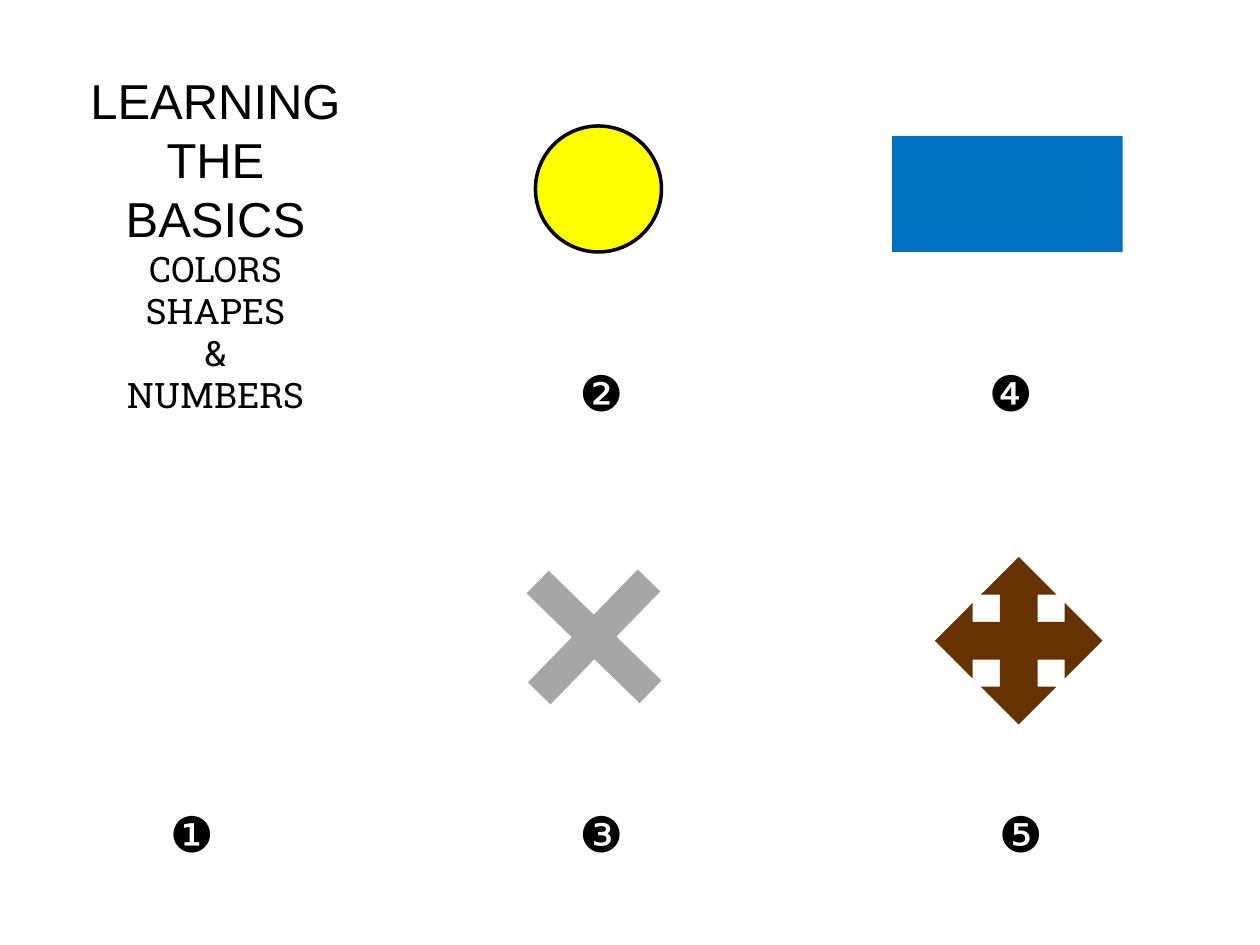
from pptx import Presentation
from pptx.dml.color import RGBColor
from pptx.enum.shapes import MSO_SHAPE as Shape
from pptx.enum.text import MSO_ANCHOR as Anchor, MSO_AUTO_SIZE as AutoSize, PP_ALIGN as Align
from pptx.util import Inches, Pt

BLACK = RGBColor(0x00, 0x00, 0x00)
YELLOW = RGBColor(0xFF, 0xFF, 0x00)
GRAY = RGBColor(0xA6, 0xA6, 0xA6)
BLUE = RGBColor(0x00, 0x70, 0xC0)
BROWN = RGBColor(0x66, 0x33, 0x00)

HEADING = {"name": "Arial", "size": Pt(28)}
TOPIC = {"name": "Roboto Slab", "size": Pt(20)}
TITLE_LINES = [
    ("LEARNING", HEADING),
    ("THE", HEADING),
    ("BASICS", HEADING),
    ("COLORS", TOPIC),
    ("SHAPES", TOPIC),
    ("&", TOPIC),
    ("NUMBERS", TOPIC),
]

UPPER_ROW, LOWER_ROW = 2.83, 6.33
NUMBERS = [
    ("❶", 1.25, LOWER_ROW),
    ("❷", 4.5, UPPER_ROW),
    ("❸", 4.5, LOWER_ROW),
    ("❹", 7.75, UPPER_ROW),
    ("❺", 7.83, LOWER_ROW),
]


def set_values(target, values):
    for name, value in values.items():
        setattr(target, name, value)


def write_line(paragraph, text, font_values, alignment):
    paragraph.alignment = alignment
    run = paragraph.add_run()
    run.text = text
    set_values(run.font, font_values)
    run.font.color.rgb = BLACK


def fill_title(title):
    set_values(title, {
        "left": Inches(0.42), "top": Inches(0.5),
        "width": Inches(2.58), "height": Inches(2.86),
    })
    frame = title.text_frame
    set_values(frame, {
        "word_wrap": True,
        "auto_size": AutoSize.SHAPE_TO_FIT_TEXT,
        "vertical_anchor": Anchor.MIDDLE,
    })
    for index, (text, font_values) in enumerate(TITLE_LINES):
        paragraph = frame.add_paragraph() if index else frame.paragraphs[0]
        write_line(paragraph, text, font_values, Align.CENTER)


def add_number(slide, text, left, top):
    box = slide.shapes.add_textbox(Inches(left), Inches(top), Inches(0.55), Inches(0.57))
    set_values(box.text_frame, {"word_wrap": False, "auto_size": AutoSize.SHAPE_TO_FIT_TEXT})
    write_line(box.text_frame.paragraphs[0], text, HEADING, Align.LEFT)


def add_figure(slide, kind, left, top, width, height, color):
    shape = slide.shapes.add_shape(kind, Inches(left), Inches(top), Inches(width), Inches(height))
    shape.shadow.inherit = False
    shape.fill.solid()
    shape.fill.fore_color.rgb = color
    shape.line.fill.background()
    return shape


def main():
    presentation = Presentation()
    set_values(presentation, {"slide_width": Inches(10), "slide_height": Inches(7.5)})
    slide = presentation.slides.add_slide(presentation.slide_layouts[5])
    fill_title(slide.shapes.title)

    circle = add_figure(slide, Shape.OVAL, 4.25, 1, 1, 1, YELLOW)
    circle.line.color.rgb = BLACK
    circle.line.width = Pt(2)

    cross = add_figure(slide, Shape.CROSS, 4.09, 4.43, 1.25, 1.25, GRAY)
    cross.adjustments[0] = 0.4
    cross.rotation = 44.2

    add_figure(slide, Shape.RECTANGLE, 7.08, 1.08, 1.83, 0.92, BLUE)
    add_figure(slide, Shape.QUAD_ARROW, 7.42, 4.42, 1.33, 1.33, BROWN)

    for text, left, top in NUMBERS:
        add_number(slide, text, left, top)

    presentation.save("out.pptx")


if __name__ == "__main__":
    main()
